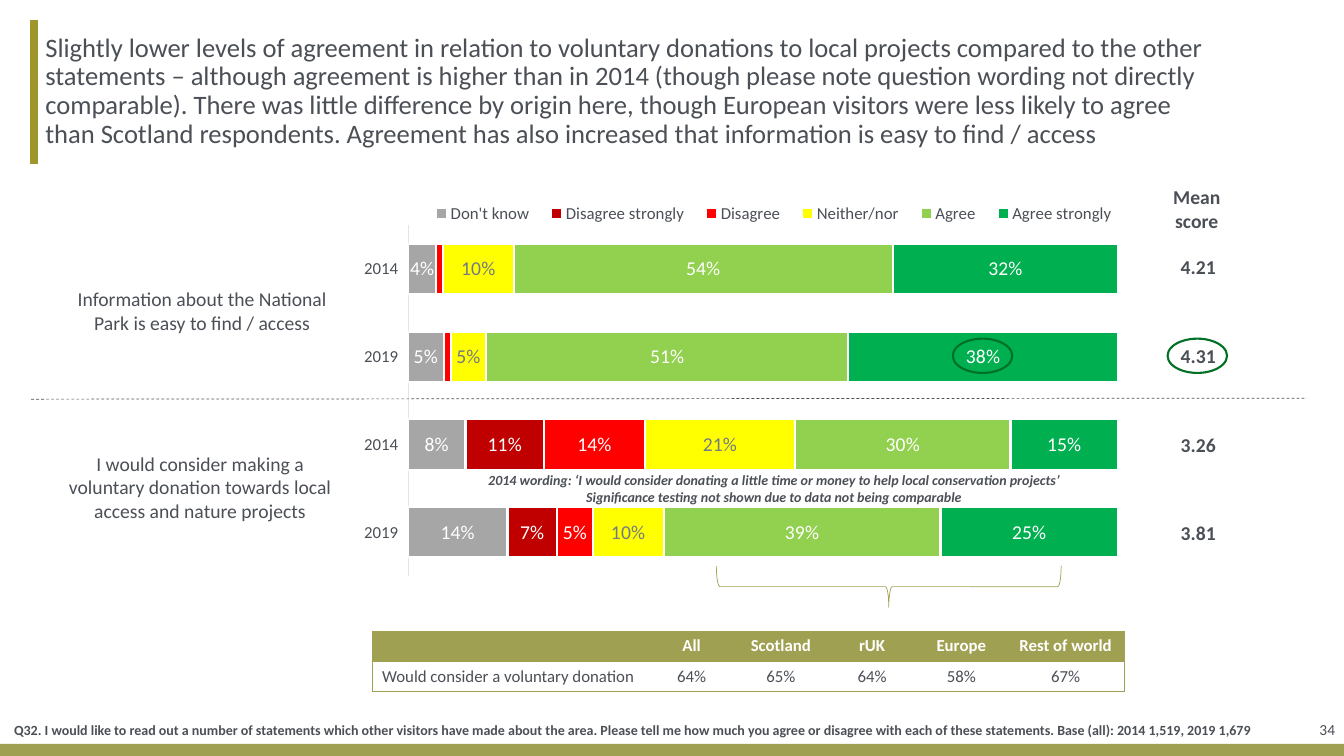
from lxml.etree import SubElement
from pptx import Presentation
from pptx.chart.data import CategoryChartData
from pptx.dml.color import RGBColor
from pptx.enum.chart import XL_CHART_TYPE as ChartType, XL_LEGEND_POSITION as LegendPosition
from pptx.enum.chart import XL_TICK_LABEL_POSITION as TickLabels, XL_TICK_MARK as TickMark
from pptx.enum.dml import MSO_LINE as Dash
from pptx.enum.shapes import MSO_CONNECTOR as Connector, MSO_SHAPE as Shape
from pptx.enum.text import MSO_ANCHOR as Anchor, PP_ALIGN as Align
from pptx.oxml import parse_xml
from pptx.oxml.ns import nsdecls, qn
from pptx.util import Inches, Pt

FONT = "Calibri"
INK = RGBColor(0x4B, 0x4F, 0x56)
GREY = RGBColor(0x74, 0x7A, 0x85)
WHITE = RGBColor(0xFF, 0xFF, 0xFF)
OLIVE = RGBColor(0x9F, 0xA0, 0x52)
DARK_OLIVE = RGBColor(0x9F, 0x96, 0x2B)
AXIS_GREY = RGBColor(0xE3, 0xE4, 0xE7)
RING_GREEN = RGBColor(0x00, 0x70, 0x24)

TITLE = (
    "Slightly lower levels of agreement in relation to voluntary donations to local projects "
    "compared to the other statements – although agreement is higher than in 2014 (though please "
    "note question wording not directly comparable). There was little difference by origin here, "
    "though European visitors were less likely to agree than Scotland respondents. Agreement has "
    "also increased that information is easy to find / access"
)
QUESTION = (
    "Q32. I would like to read out a number of statements which other visitors have made about the "
    "area. Please tell me how much you agree or disagree with each of these statements. "
    "Base (all): 2014 1,519, 2019 1,679"
)
WORDING_NOTE = (
    "2014 wording: ‘I would consider donating a little time or money to help local conservation "
    "projects’\nSignificance testing not shown due to data not being comparable"
)
YEARS = ["2019", "2014", "2019", "2014"]
ANSWERS = [
    ("Don't know", (0.14, 0.08, 0.05, 0.04), RGBColor(0xA6, 0xA6, 0xA6), WHITE),
    ("Disagree strongly", (0.07, 0.11, 0, 0), RGBColor(0xC0, 0x00, 0x00), WHITE),
    ("Disagree", (0.05, 0.14, 0.01, 0.01), RGBColor(0xFF, 0x00, 0x00), WHITE),
    ("Neither/nor", (0.1, 0.21, 0.05, 0.1), RGBColor(0xFF, 0xFF, 0x00), GREY),
    ("Agree", (0.39, 0.3, 0.51, 0.54), RGBColor(0x92, 0xD0, 0x50), WHITE),
    ("Agree strongly", (0.25, 0.15, 0.38, 0.32), RGBColor(0x00, 0xB0, 0x50), WHITE),
]
SMALLEST_LABELLED = 0.04
MEAN_SCORES = ["4.21", "4.31", "3.26", "3.81"]
ORIGINS = [
    ["", "All", "Scotland", "rUK", "Europe", "Rest of world"],
    ["Would consider a voluntary donation", "64%", "65%", "64%", "58%", "67%"],
]
ORIGIN_WIDTHS = [2.76, 0.82, 0.95, 0.86, 0.91, 1.16]


def style_font(font, size, color=INK, bold=False, italic=False):
    font.name, font.size, font.bold, font.italic = FONT, Pt(size), bold, italic
    font.color.rgb = color


def place(*lengths):
    return [Inches(length) for length in lengths]


def add_text(slide, at, text, size, align=Align.CENTER, anchor=Anchor.TOP, margins=None,
             wrap=True, spacing=None, bold=False, italic=False):
    frame = slide.shapes.add_textbox(*place(*at)).text_frame
    frame.word_wrap, frame.vertical_anchor = wrap, anchor
    if margins:
        (frame.margin_left, frame.margin_top,
         frame.margin_right, frame.margin_bottom) = place(*margins)
    frame.text = text
    for paragraph in frame.paragraphs:
        paragraph.alignment = align
        if spacing:
            paragraph.line_spacing = spacing
        for run in paragraph.runs:
            style_font(run.font, size, INK, bold, italic)


def add_line(slide, ends, color, width, dash=None):
    line = slide.shapes.add_connector(Connector.STRAIGHT, *place(*ends))
    line.line.color.rgb, line.line.width = color, Pt(width)
    if dash:
        line.line.dash_style = dash
    SubElement(line._element.spPr, qn("a:effectLst"))


def add_outline(slide, kind, at, color, width, rotation=0):
    outline = slide.shapes.add_shape(kind, *place(*at))
    outline.shadow.inherit = False
    outline.fill.background()
    outline.line.color.rgb, outline.line.width = color, Pt(width)
    outline.rotation = rotation


def add_footer_band(slide):
    band = slide.shapes.add_shape(Shape.RECTANGLE, *place(0, 7.38, 13.33, 0.15))
    band.shadow.inherit = False
    band.fill.solid()
    band.fill.fore_color.rgb = OLIVE
    band.line.fill.background()


def set_layout(parent, index, x, y, w, h, target=""):
    for old in parent.findall(qn("c:layout")):
        parent.remove(old)
    modes = '<c:xMode val="edge"/><c:yMode val="edge"/>'
    sizes = "".join(f'<c:{key} val="{value}"/>' for key, value in zip("xywh", (x, y, w, h)))
    parent.insert(index, parse_xml(
        f'<c:layout {nsdecls("c")}><c:manualLayout>{target}{modes}{sizes}'
        '</c:manualLayout></c:layout>'))


def format_answer(series, values, color, label_color):
    series.format.fill.solid()
    series.format.fill.fore_color.rgb = color
    series.format.line.color.rgb, series.format.line.width = WHITE, Pt(1.5)
    labelled = [value >= SMALLEST_LABELLED for value in values]
    series.data_labels.show_value = all(labelled)
    if all(labelled):
        style_font(series.data_labels.font, 14, label_color)
        return
    for index, shown in enumerate(labelled):
        if shown:
            style_font(series.points[index].data_label.font, 14, label_color)


def add_agreement_chart(slide):
    data = CategoryChartData(number_format="0%")
    data.categories = YEARS
    for name, values, _, _ in ANSWERS:
        data.add_series(name, values)
    chart = slide.shapes.add_chart(
        ChartType.BAR_STACKED_100, *place(1.06, 1.86, 10.34, 3.94), data).chart
    style_font(chart.font, 10)
    chart.has_title = False
    chart.has_legend = True
    chart.legend.position = LegendPosition.TOP
    chart.legend.include_in_layout = False
    style_font(chart.legend.font, 12)
    set_layout(chart.legend._element, 1, 0.3, 0.02, 0.68, 0.09)
    set_layout(chart._chartSpace.chart.plotArea, 0, 0.289, 0.095, 0.681, 0.884,
               '<c:layoutTarget val="inner"/>')

    years = chart.category_axis
    years.major_tick_mark = years.minor_tick_mark = TickMark.NONE
    years.tick_label_position = TickLabels.LOW
    years.format.line.color.rgb, years.format.line.width = AXIS_GREY, Pt(0.75)
    style_font(years.tick_labels.font, 12)
    shares = chart.value_axis
    shares.minimum_scale, shares.maximum_scale = 0, 1
    shares.has_major_gridlines = False
    shares.visible = False

    plot = chart.plots[0]
    plot.gap_width, plot.overlap, plot.vary_by_categories = 75, 100, False
    for series, (_, values, color, label_color) in zip(plot.series, ANSWERS):
        format_answer(series, values, color, label_color)


def set_borders(cell, olive_sides):
    properties = cell._tc.get_or_add_tcPr()
    for side in "LRTB":
        border = SubElement(properties, qn(f"a:ln{side}"), w=str(Pt(0.5)))
        if side in olive_sides:
            SubElement(SubElement(border, qn("a:solidFill")), qn("a:srgbClr"), val=str(OLIVE))
        else:
            SubElement(border, qn("a:noFill"))


def fill_cell(cell, text, size, color, bold, align=Align.CENTER, anchor=Anchor.MIDDLE,
              olive_sides="", fill=None):
    set_borders(cell, olive_sides)
    if fill:
        cell.fill.solid()
        cell.fill.fore_color.rgb = fill
    else:
        cell.fill.background()
    cell.vertical_anchor = anchor
    cell.text = text
    paragraph = cell.text_frame.paragraphs[0]
    paragraph.alignment = align
    style_font(paragraph.font, size, color, bold)
    for run in paragraph.runs:
        style_font(run.font, size, color, bold)


def add_grid(slide, left, top, widths, row_height, row_count):
    table = slide.shapes.add_table(
        row_count, len(widths), *place(left, top, sum(widths), row_height * row_count)).table
    table.first_row = table.horz_banding = False
    for column, width in zip(table.columns, widths):
        column.width = Inches(width)
    return table


def add_mean_scores(slide):
    table = add_grid(slide, 11.56, 2.22, [0.65], 0.88, len(MEAN_SCORES))
    for row, score in enumerate(MEAN_SCORES):
        fill_cell(table.cell(row, 0), score, 14, INK, True)


def add_origin_table(slide):
    table = add_grid(slide, 3.69, 6.26, ORIGIN_WIDTHS, 0.3, len(ORIGINS))
    last = len(ORIGIN_WIDTHS) - 1
    for row, texts in enumerate(ORIGINS):
        header = row == 0
        for column, text in enumerate(texts):
            cell = table.cell(row, column)
            sides = ("T" if header else "TB") + {0: "L", last: "R"}.get(column, "")
            fill_cell(cell, text, 12, WHITE if header else INK, header,
                      Align.CENTER if column else Align.LEFT,
                      Anchor.TOP if header else Anchor.MIDDLE, sides, OLIVE if header else None)
            if column and not header:
                cell.margin_left = cell.margin_top = cell.margin_right = Inches(0.01)
                cell.margin_bottom = 0


def main():
    deck = Presentation()
    deck.slide_width, deck.slide_height = place(13.33, 7.5)
    slide = deck.slides.add_slide(deck.slide_layouts[6])
    body_margins = (0.08, 0, 0, 0)

    add_footer_band(slide)
    add_line(slide, (0.34, 0.2, 0.34, 1.63), DARK_OLIVE, 6)
    add_text(slide, (12.42, 6.95, 0.92, 0.58), "34", 11, Align.RIGHT, Anchor.MIDDLE)
    add_text(slide, (0.37, 0.2, 11.57, 1.42), TITLE, 19, Align.LEFT, Anchor.MIDDLE,
             body_margins, spacing=0.9)
    add_agreement_chart(slide)
    add_mean_scores(slide)
    add_text(slide, (0.06, 7.12, 12.64, 0.25), QUESTION, 10, Align.LEFT, Anchor.MIDDLE,
             body_margins, bold=True)
    add_line(slide, (0.31, 3.96, 12.96, 3.95), INK, 0.5, Dash.DASH)
    add_text(slide, (0.53, 4.43, 2.91, 0.81),
             "I would consider making a voluntary donation towards local access and nature projects",
             14)
    add_text(slide, (0.53, 2.8, 2.95, 0.57),
             "Information about the National Park is easy to find / access", 14)
    add_text(slide, (4.63, 4.63, 6.09, 0.44), WORDING_NOTE, 10, bold=True, italic=True)
    add_origin_table(slide)
    add_outline(slide, Shape.RIGHT_BRACE, (8.61, 4.11, 0.41, 3.42), OLIVE, 0.5, 90)
    add_text(slide, (11.51, 1.79, 0.72, 0.57), "Mean\nscore", 14, wrap=False, bold=True)
    for ring_left in (11.58, 9.45):
        add_outline(slide, Shape.OVAL, (ring_left, 3.36, 0.59, 0.34), RING_GREEN, 1.5)
    deck.save("out.pptx")


if __name__ == "__main__":
    main()
